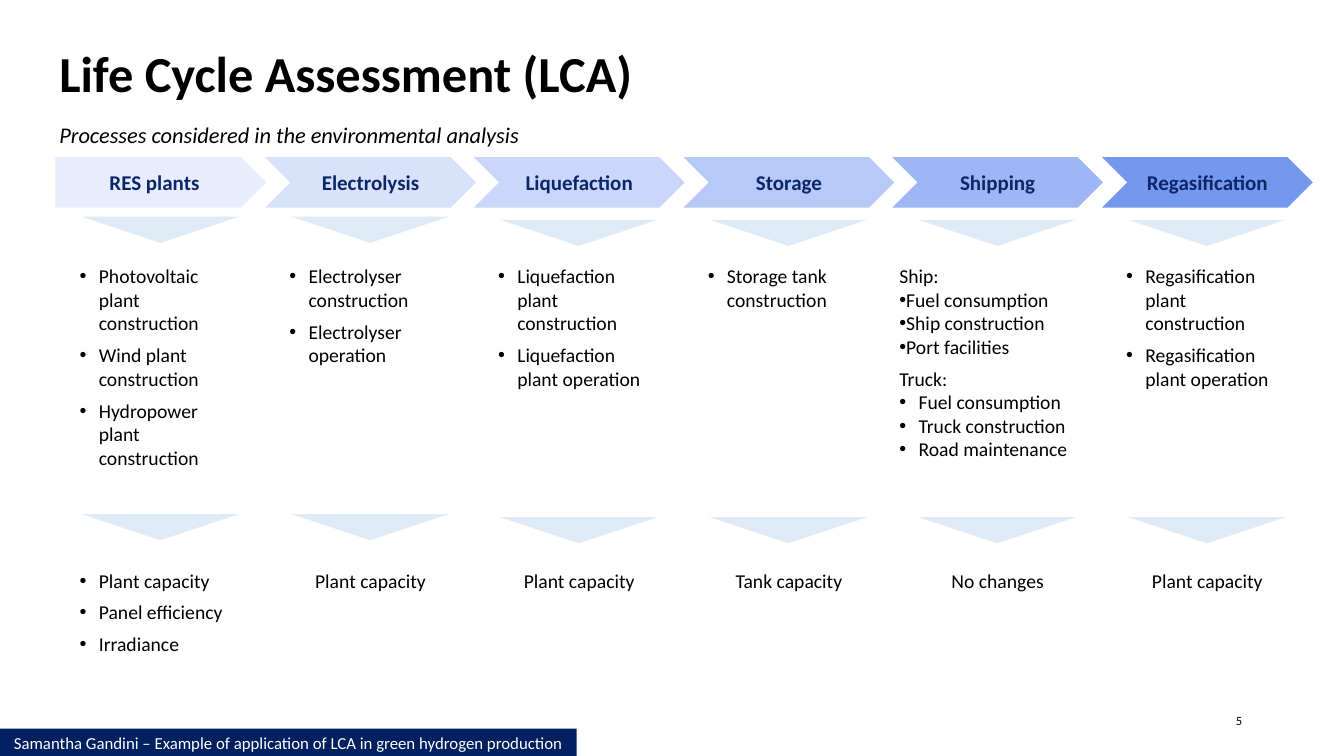
from lxml import etree
from pptx import Presentation
from pptx.dml.color import RGBColor
from pptx.enum.shapes import MSO_SHAPE
from pptx.enum.text import MSO_ANCHOR, PP_ALIGN
from pptx.oxml.ns import qn
from pptx.util import Pt

PX = 9144  # EMU per px, 100 px to the inch
RECT, PENTAGON = MSO_SHAPE.RECTANGLE, MSO_SHAPE.PENTAGON
CHEVRON, TRIANGLE = MSO_SHAPE.CHEVRON, MSO_SHAPE.ISOSCELES_TRIANGLE
LEFT, CENTER, RIGHT = PP_ALIGN.LEFT, PP_ALIGN.CENTER, PP_ALIGN.RIGHT
TOP, MIDDLE = MSO_ANCHOR.TOP, MSO_ANCHOR.MIDDLE


class Theme:
    font = "Calibri"
    black, white = "000000", "FFFFFF"
    navy, step_text, pointer = "002060", "0C266A", "DEEBF7"
    title, subtitle, step, body, footer, number = 36, 16, 15, 14, 12, 9


HANG = 19  # bullet indent
# Text, left margin (None for no indent), bullet, space after in points
SHIPPING = [
    ("Ship:", None, False, 0),
    ("Fuel consumption", 4, True, 0),
    ("Ship construction", 4, True, 0),
    ("Port facilities", 4, True, 6),
    ("Truck:", HANG, False, 0),
    ("Fuel consumption", HANG, True, 0),
    ("Truck construction", HANG, True, 0),
    ("Road maintenance", HANG, True, 0),
]


def bullets(*texts):
    return [(text, HANG, True, 6) for text in texts]


def plain(text):
    return [(text, None, False, 6)]


# Step name, arrow fill, pointer drop, processes, parameters
STEPS = [
    ("RES plants", "E7EDFD", 0,
     bullets("Photovoltaic plant construction", "Wind plant construction",
             "Hydropower plant construction"),
     bullets("Plant capacity", "Panel efficiency", "Irradiance")),
    ("Electrolysis", "D9E2FB", 0,
     bullets("Electrolyser construction", "Electrolyser operation"),
     plain("Plant capacity")),
    ("Liquefaction", "CAD7FA", 3,
     bullets("Liquefaction plant construction", "Liquefaction plant operation"),
     plain("Plant capacity")),
    ("Storage", "B7C9F7", 3,
     bullets("Storage tank construction"), plain("Tank capacity")),
    ("Shipping", "9EB7F4", 3, SHIPPING, plain("No changes")),
    ("Regasification", "7598EF", 3,
     bullets("Regasification plant construction", "Regasification plant operation"),
     plain("Plant capacity")),
]


def color(value):
    return RGBColor.from_string(value)


def emu(box):
    return [v * PX for v in box]


def write(sp, paras, size, fill=Theme.black, align=LEFT, anchor=TOP,
          inset=(10, 5), bold=False, italic=False):
    """Put a string, or a list of paragraph tuples, into a shape."""
    if isinstance(paras, str):
        paras = [(paras, None, False, 0)]
    tf = sp.text_frame
    tf.word_wrap = True
    tf.vertical_anchor = anchor
    tf.margin_left = tf.margin_right = inset[0] * PX
    tf.margin_top = tf.margin_bottom = inset[1] * PX
    for i, (text, margin, bullet, after) in enumerate(paras):
        p = tf.add_paragraph() if i else tf.paragraphs[0]
        p.alignment = align
        p.space_after = Pt(after)
        pPr = p._p.get_or_add_pPr()
        if margin is not None:
            pPr.set("marL", str(margin * PX))
            pPr.set("indent", str(-HANG * PX))
        if bullet:
            etree.SubElement(pPr, qn("a:buFont")).set("typeface", "Arial")
            etree.SubElement(pPr, qn("a:buChar")).set("char", "•")
        r = p.add_run()
        r.text = text
        r.font.name, r.font.size = Theme.font, Pt(size)
        r.font.bold, r.font.italic = bold, italic
        r.font.color.rgb = color(fill)


def text_box(s, box, paras, size, **fmt):
    write(s.shapes.add_textbox(*emu(box)), paras, size, **fmt)


def block(s, kind, box, fill):
    sp = s.shapes.add_shape(kind, *emu(box))
    sp.shadow.inherit = False
    sp.fill.solid()
    sp.fill.fore_color.rgb = color(fill)
    sp.line.fill.background()
    return sp


def heading(s, x, y, w, h):
    text_box(s, (x, y, w, 71), "Life Cycle Assessment (LCA)", Theme.title, bold=True)
    text_box(s, (x, y + h - 37, 708, 37),
             "Processes considered in the environmental analysis",
             Theme.subtitle, italic=True)


def footer(s, x, y, w, h):
    bar = block(s, RECT, (x, y, w, h), Theme.navy)
    write(bar, "Samantha Gandini – Example of application of LCA in green hydrogen production",
          Theme.footer, fill=Theme.white, align=CENTER, anchor=MIDDLE)
    text_box(s, (x + 942, y - 28, 300, 40), "5", Theme.number, align=RIGHT, anchor=MIDDLE)


def step_column(s, x, y, w, h, step, kind):
    name, fill, drop, processes, parameters = step
    # Arrow with the step name
    write(block(s, kind, (x, y, w, 50), fill), name, Theme.step, fill=Theme.step_text,
          align=CENTER, anchor=MIDDLE, inset=(0, 5), bold=True)
    # Pointers above both text rows
    for top in (59, 354):
        block(s, TRIANGLE, (x + 26, y + top + drop, 156, 26), Theme.pointer).rotation = 180
    # Processes
    grouped = processes is SHIPPING
    box = (x + 3, y + 101, w, 207) if grouped else (x + 20, y + 101, 169, 215)
    text_box(s, box, processes, Theme.body, inset=(4, 5))
    # Parameters
    align = LEFT if len(parameters) > 1 else CENTER
    text_box(s, (x + 20, y + 403, 169, h - 403), parameters, Theme.body,
             align=align, inset=(4, 5))


def process_chain(s, x, y, w, h):
    arrow = 209
    span = w - arrow
    for i, step in enumerate(STEPS):
        left = x + round(span * i / (len(STEPS) - 1))
        step_column(s, left, y, arrow, h, step, CHEVRON if i else PENTAGON)


def main():
    prs = Presentation()
    prs.slide_width, prs.slide_height = emu((1333, 750))
    s = prs.slides.add_slide(prs.slide_layouts[6])
    footer(s, 0, 723, 572, 27)
    heading(s, 49, 37, 1114, 115)
    process_chain(s, 55, 156, 1247, 501)
    prs.save("out.pptx")


if __name__ == "__main__":
    main()
